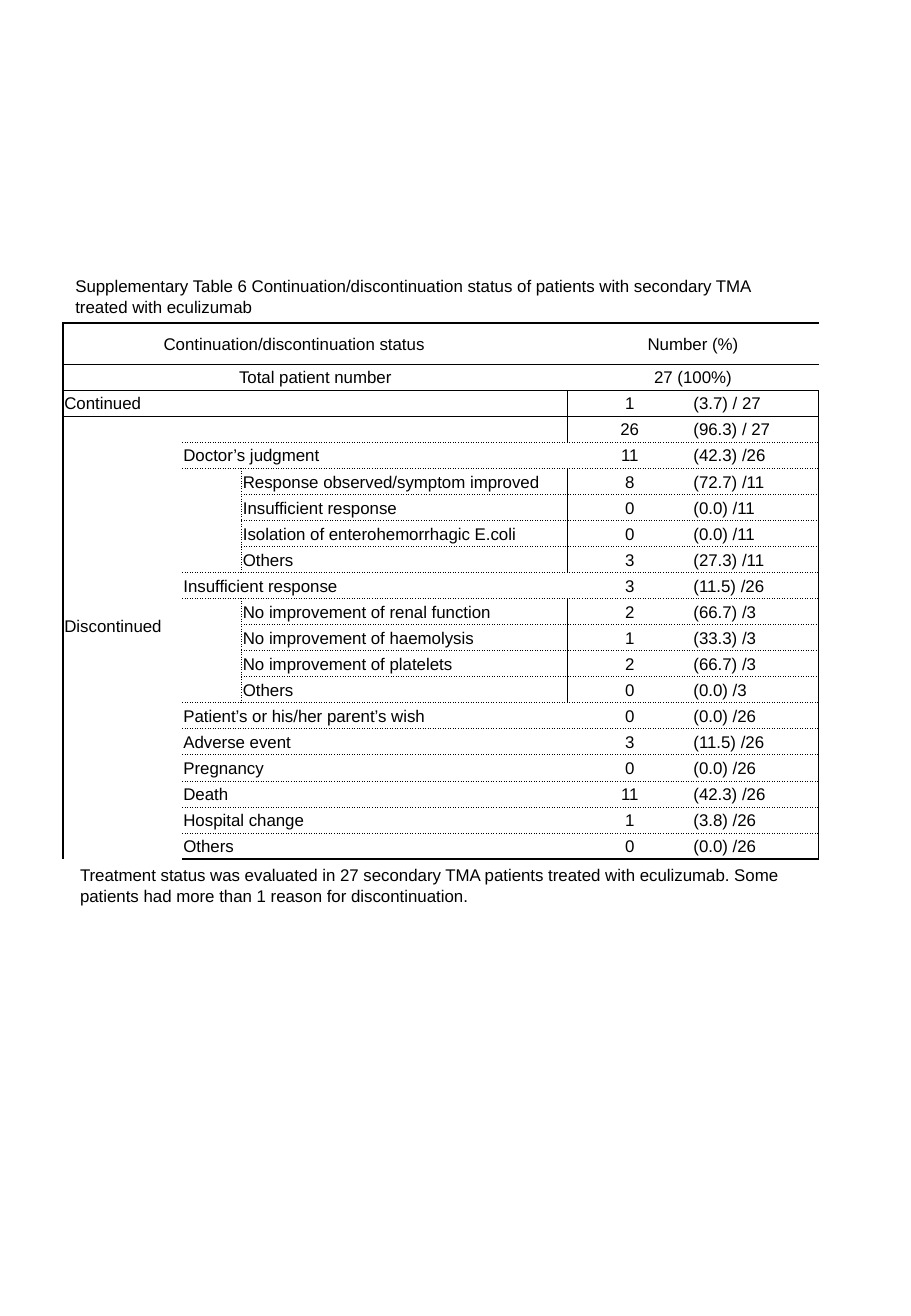
from lxml.etree import SubElement
from pptx import Presentation
from pptx.dml.color import RGBColor
from pptx.enum.text import MSO_ANCHOR as Anchor, MSO_AUTO_SIZE as AutoSize, PP_ALIGN as Align
from pptx.oxml.ns import qn
from pptx.util import Inches, Pt

BLACK = RGBColor(0x00, 0x00, 0x00)
WHITE = RGBColor(0xFF, 0xFF, 0xFF)
FONT, SIZE = "Arial", 10

# Line styles as (width in points, dash)
THICK, THIN, DOTTED = (1, "solid"), (0.5, "solid"), (0.5, "dot")

SLIDE_WIDTH, SLIDE_HEIGHT = 7.5, 10.83
LEFT, TABLE_TOP, CAPTION_HEIGHT = 0.52, 2.66, 0.44
COLUMNS = [0.98, 0.49, 0.77, 1.91, 1.03, 1.04]
HEADER_HEIGHT, TABLE_HEIGHT = 0.34, 4.41
COUNT_COLUMN, SHARE_COLUMN = 4, 5
FIRST_REASON = 4

CAPTION = ("Supplementary Table 6 Continuation/discontinuation status of patients "
           "with secondary TMA treated with eculizumab")
FOOTNOTE = ("Treatment status was evaluated in 27 secondary TMA patients treated with "
            "eculizumab. Some patients had more than 1 reason for discontinuation.")

# Level (1 reason, 2 detail of the reason above), label, count, share
REASONS = [
    (1, "Doctor’s judgment", "11", "(42.3) /26"),
    (2, "Response observed/symptom improved", "8", "(72.7) /11"),
    (2, "Insufficient response", "0", "(0.0) /11"),
    (2, "Isolation of enterohemorrhagic E.coli", "0", "(0.0) /11"),
    (2, "Others", "3", "(27.3) /11"),
    (1, "Insufficient response", "3", "(11.5) /26"),
    (2, "No improvement of renal function", "2", "(66.7) /3"),
    (2, "No improvement of haemolysis", "1", "(33.3) /3"),
    (2, "No improvement of platelets", "2", "(66.7) /3"),
    (2, "Others", "0", "(0.0) /3"),
    (1, "Patient’s or his/her parent’s wish", "0", "(0.0) /26"),
    (1, "Adverse event", "3", "(11.5) /26"),
    (1, "Pregnancy", "0", "(0.0) /26"),
    (1, "Death", "11", "(42.3) /26"),
    (1, "Hospital change", "1", "(3.8) /26"),
    (1, "Others", "0", "(0.0) /26"),
]
ROW_COUNT = FIRST_REASON + len(REASONS)
# Line above each row, then the one below the last row
RULES = [THICK, THICK, THIN, THIN] + [DOTTED] * len(REASONS) + [THICK]


def write(frame, text, size=SIZE, color=BLACK, align=Align.LEFT):
    paragraph = frame.paragraphs[0]
    paragraph.alignment = align
    if text:
        run = paragraph.add_run()
        run.text = text
        run.font.name, run.font.size = FONT, Pt(size)
        run.font.color.rgb = color
    else:
        SubElement(paragraph._p, qn("a:endParaRPr"), sz=str(size * 100))
    return paragraph


def draw_edge(cell, side, line):
    """Set one side (L, R, T or B) of a cell; None leaves it without a line."""
    properties = cell._tc.get_or_add_tcPr()
    edge = SubElement(properties, qn(f"a:ln{side}"))
    if line is None:
        SubElement(edge, qn("a:noFill"))
        return
    width, dash = line
    edge.set("w", str(Pt(width)))
    fill = SubElement(edge, qn("a:solidFill"))
    SubElement(fill, qn("a:srgbClr"), val=str(BLACK))
    SubElement(edge, qn("a:prstDash"), val=dash)


class StatusSlide:
    """The slide with its caption, status table and footnote."""

    def __init__(self, presentation):
        self.slide = presentation.slides.add_slide(presentation.slide_layouts[5])
        self.table = None

    def place_text(self, shape, text, top, indent=0):
        shape.left, shape.top = Inches(LEFT), Inches(top)
        shape.width, shape.height = Inches(sum(COLUMNS)), Inches(CAPTION_HEIGHT)
        frame = shape.text_frame
        frame.word_wrap = True
        frame.auto_size = AutoSize.SHAPE_TO_FIT_TEXT
        frame.vertical_anchor = Anchor.TOP
        paragraph = write(frame, text)
        if indent:
            paragraph._p.get_or_add_pPr().set("marL", str(Inches(indent)))

    def caption(self, text):
        self.place_text(self.slide.shapes.title, text, TABLE_TOP - CAPTION_HEIGHT)

    def footnote(self, text):
        box = self.slide.shapes.add_textbox(0, 0, 0, 0)
        self.place_text(box, text, TABLE_TOP + TABLE_HEIGHT, indent=0.04)

    def start_table(self):
        self.table = self.slide.shapes.add_table(
            ROW_COUNT, len(COLUMNS), Inches(LEFT), Inches(TABLE_TOP),
            Inches(sum(COLUMNS)), Inches(TABLE_HEIGHT)).table
        self.table.first_row = self.table.horz_banding = False
        for column, width in zip(self.table.columns, COLUMNS):
            column.width = Inches(width)
        body_height = (TABLE_HEIGHT - HEADER_HEIGHT) / (ROW_COUNT - 1)
        for index, row in enumerate(self.table.rows):
            row.height = Inches(body_height if index else HEADER_HEIGHT)

    def block(self, row, column, text="", rows=1, columns=1, left=None, right=None,
              top=True, bottom=True, align=Align.LEFT, space_right=0.01, space_below=0):
        """Fill a cell or merged area; top and bottom switch the rules of its rows."""
        last_row, last_column = row + rows - 1, column + columns - 1
        first = self.table.cell(row, column)
        if rows * columns > 1:
            first.merge(self.table.cell(last_row, last_column))
        for r in range(row, last_row + 1):
            for c in range(column, last_column + 1):
                cell = self.table.cell(r, c)
                draw_edge(cell, "L", left if c == column else None)
                draw_edge(cell, "R", right if c == last_column else None)
                draw_edge(cell, "T", RULES[r] if top and r == row else None)
                draw_edge(cell, "B", RULES[r + 1] if bottom and r == last_row else None)
                cell.fill.solid()
                cell.fill.fore_color.rgb = WHITE
                cell.vertical_anchor = Anchor.MIDDLE
                cell.margin_left = cell.margin_top = Inches(0.01)
                cell.margin_right = Inches(space_right)
                cell.margin_bottom = Inches(space_below)
                write(cell.text_frame, text if cell is first or (r, c) == (row, column) else "",
                      align=align)

    def heading(self, row, status, number, space_right=0.01):
        self.block(row, 0, status, columns=4, left=THICK, right=THIN,
                   align=Align.CENTER, space_right=space_right)
        self.block(row, COUNT_COLUMN, number, columns=2, left=THIN, right=THICK,
                   align=Align.CENTER)

    def numbers(self, row, count, share):
        self.block(row, COUNT_COLUMN, count, left=THIN, align=Align.CENTER)
        self.block(row, SHARE_COLUMN, share, right=THICK)

    def reasons(self):
        levels = [reason[0] for reason in REASONS]
        for index, (level, label, count, share) in enumerate(REASONS):
            row = FIRST_REASON + index
            if level == 1:
                self.block(row, 1, label, columns=3, right=THIN)
            else:
                self.block(row, 1, right=DOTTED, top=levels[index - 1] == 1,
                           bottom=levels[index + 1] == 1)
                self.block(row, 2, label, columns=2, left=DOTTED, right=THIN)
            self.numbers(row, count, share)


def main():
    presentation = Presentation()
    presentation.slide_width = Inches(SLIDE_WIDTH)
    presentation.slide_height = Inches(SLIDE_HEIGHT)
    page = StatusSlide(presentation)
    page.caption(CAPTION)
    page.start_table()

    page.heading(0, "Continuation/discontinuation status", "Number (%)", space_right=0.36)
    page.heading(1, "Total patient number", "27 (100%)")

    continued, discontinued = 2, 3
    page.block(continued, 0, "Continued", columns=2, left=THICK)
    page.numbers(continued, "1", "(3.7) / 27")
    page.block(discontinued, 0, "Discontinued", rows=ROW_COUNT - discontinued,
               left=THICK, space_below=0.2)
    page.block(discontinued, 1)
    page.numbers(discontinued, "26", "(96.3) / 27")
    for row in (continued, discontinued):
        page.block(row, 2)
        page.block(row, 3, right=THIN)
    page.reasons()

    page.footnote(FOOTNOTE)
    presentation.save("out.pptx")


if __name__ == "__main__":
    main()
